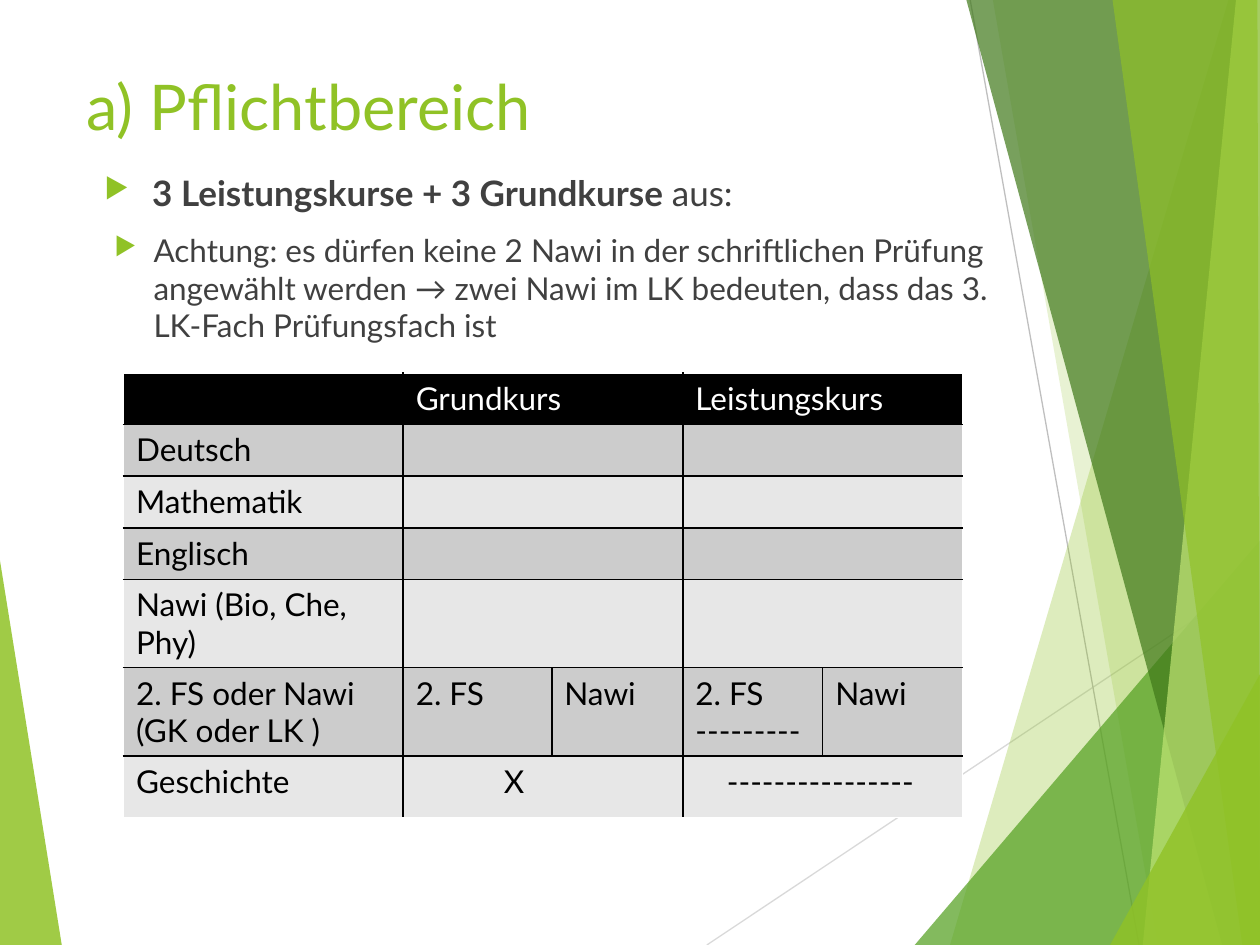
from lxml.etree import SubElement
from pptx import Presentation
from pptx.dml.color import RGBColor
from pptx.enum.shapes import MSO_CONNECTOR
from pptx.enum.text import MSO_ANCHOR
from pptx.oxml.ns import qn
from pptx.util import Inches, Pt

GREEN = RGBColor(0x90, 0xC2, 0x26)
MID_GREEN = RGBColor(0x54, 0xA0, 0x21)
DARK_GREEN = RGBColor(0x3F, 0x78, 0x19)
LIGHT_GREEN = RGBColor(0xC0, 0xE4, 0x74)
TEXT_GRAY = RGBColor(0x40, 0x40, 0x40)
LINE_GRAY = RGBColor(0xBF, 0xBF, 0xBF)
PALE_GRAY = RGBColor(0xD9, 0xD9, 0xD9)
BAND_DARK = RGBColor(0xCC, 0xCC, 0xCC)
BAND_LIGHT = RGBColor(0xE7, 0xE7, 0xE7)
BLACK = RGBColor(0, 0, 0)
WHITE = RGBColor(0xFF, 0xFF, 0xFF)
FONT = "Lato"

LEFT_FACET = ([(0, 4.45), (0.49, 7.5), (0, 7.5)], GREEN, 85)
RAYS = [((5.61, 7.5), (10, 4.57), PALE_GRAY), ((7.7, 0), (9.04, 7.5), LINE_GRAY)]
RIGHT_FACETS = [
    ([(9.75, 0), (7.54, 7.5), (10, 7.5), (10, 0)], GREEN, 30),
    ([(7.88, 0), (9.19, 7.5), (10, 7.5), (10, 0)], GREEN, 20),
    ([(7.26, 7.5), (10, 4.29), (10, 7.5)], MID_GREEN, 72),
    ([(7.67, 0), (9.7, 7.5), (10, 7.5), (10, 0)], DARK_GREEN, 70),
    ([(9.81, 0), (9.07, 7.5), (10, 7.5), (10, 0)], LIGHT_GREEN, 70),
    ([(8.83, 0), (9.86, 7.5), (10, 7.5), (9.98, 0)], GREEN, 65),
    ([(8.81, 7.5), (10, 5.35), (10, 7.5)], GREEN, 80),
]

TITLE = "a) Pflichtbereich"
BULLETS = [
    (0.38, -0.38, 20, [("3 Leistungskurse + 3 Grundkurse ", True), ("aus:", False)]),
    (0.39, -0.31, 18, [("Achtung: es dürfen keine 2 Nawi in der schriftlichen Prüfung "
                        "angewählt werden → zwei Nawi im LK bedeuten, dass das 3. "
                        "LK-Fach Prüfungsfach ist", False)]),
]

COL_WIDTHS = [2.22, 1.18, 1.04, 1.11, 1.11]
ROW_HEIGHTS = [0.41] * 5 + [0.49] * 2
COURSES = [
    ["", "Grundkurs", None, "Leistungskurs", None],
    ["Deutsch", "", None, "", None],
    ["Mathematik", "", None, "", None],
    ["Englisch", "", None, "", None],
    ["Nawi (Bio, Che, Phy)", "", None, "", None],
    ["2. FS oder Nawi (GK oder LK )", "2. FS", "Nawi", "2. FS\n---------", "Nawi"],
    ["Geschichte", "X", None, "----------------", None],
]
CELL_INDENTS = {(6, 1): 0.7, (6, 3): 0.25}


def add_facet(s, points, color, opacity):
    pts = [(Inches(x), Inches(y)) for x, y in points]
    builder = s.shapes.build_freeform(*pts[0], scale=1.0)
    builder.add_line_segments(pts[1:], close=True)
    sp = builder.convert_to_shape()
    sp.shadow.inherit = False
    sp.fill.solid()
    sp.fill.fore_color.rgb = color
    sp.line.fill.background()
    srgb = sp._element.spPr.find(".//" + qn("a:srgbClr"))
    SubElement(srgb, qn("a:alpha"), val=str(opacity * 1000))


def add_ray(s, start, end, color):
    ends = [Inches(v) for v in start + end]
    line = s.shapes.add_connector(MSO_CONNECTOR.STRAIGHT, *ends)
    line.line.color.rgb = color
    line.line.width = Pt(0.75)
    SubElement(line._element.spPr, qn("a:effectLst"))


def add_text_frame(s, *box):
    tf = s.shapes.add_textbox(*[Inches(v) for v in box]).text_frame
    tf.word_wrap = True
    return tf


def add_run(p, text, color, **font):
    r = p.add_run()
    r.text = text
    r.font.color.rgb = color
    for name, value in {"name": FONT, **font}.items():
        setattr(r.font, name, value)


def set_bullet(p, left, indent):
    pPr = p._p.get_or_add_pPr()
    pPr.set("marL", str(Inches(left)))
    pPr.set("indent", str(Inches(indent)))
    color = SubElement(pPr, qn("a:buClr"))
    SubElement(color, qn("a:srgbClr"), val=str(GREEN))
    SubElement(pPr, qn("a:buSzPct"), val="80000")
    SubElement(pPr, qn("a:buChar"), char="▶")


def set_borders(cell, colors):
    tcPr = cell._tc.get_or_add_tcPr()
    for i, (side, color) in enumerate(colors.items()):
        ln = SubElement(tcPr, qn("a:ln" + side), w=str(Pt(1)))
        fill = SubElement(ln, qn("a:solidFill"))
        SubElement(fill, qn("a:srgbClr"), val=str(color))
        tcPr.insert(i, ln)


def add_course_table(s):
    rows, cols = len(COURSES), len(COL_WIDTHS)
    box = [Inches(v) for v in (0.98, 2.96, sum(COL_WIDTHS), sum(ROW_HEIGHTS))]
    table = s.shapes.add_table(rows, cols, *box).table
    for col, width in zip(table.columns, COL_WIDTHS):
        col.width = Inches(width)
    for row, height in zip(table.rows, ROW_HEIGHTS):
        row.height = Inches(height)
    for i, texts in enumerate(COURSES):
        band = BLACK if i == 0 else BAND_DARK if i % 2 else BAND_LIGHT
        for j, text in enumerate(texts):
            cell = table.cell(i, j)
            cell.fill.solid()
            cell.fill.fore_color.rgb = band
            merged = j + 1 < cols and texts[j + 1] is None
            last = j + merged == cols - 1
            set_borders(cell, {
                "L": WHITE if j == 0 else BLACK,
                "R": WHITE if last else BLACK,
                "T": WHITE if i == 0 else BLACK,
                "B": WHITE if i == rows - 1 else BLACK,
            })
            if merged:
                cell.merge(table.cell(i, j + 1))
            if not text:
                continue
            tf = cell.text_frame
            for k, part in enumerate(text.split("\n")):
                p = tf.add_paragraph() if k else tf.paragraphs[0]
                add_run(p, part, BLACK if i else WHITE, size=Pt(18), bold=False)
                if (i, j) in CELL_INDENTS:
                    p._p.get_or_add_pPr().set("marL", str(Inches(CELL_INDENTS[i, j])))


def main():
    prs = Presentation()
    prs.slide_width, prs.slide_height = Inches(10), Inches(7.5)
    s = prs.slides.add_slide(prs.slide_layouts[6])

    add_facet(s, *LEFT_FACET)
    for ray in RAYS:
        add_ray(s, *ray)
    for facet in RIGHT_FACETS:
        add_facet(s, *facet)

    tf = add_text_frame(s, 0.59, 0.44, 7.68, 0.79)
    tf.vertical_anchor = MSO_ANCHOR.MIDDLE
    add_run(tf.paragraphs[0], TITLE, GREEN, size=Pt(36))

    tf = add_text_frame(s, 0.73, 1.31, 7.41, 1.5)
    for i, (left, indent, size, runs) in enumerate(BULLETS):
        p = tf.add_paragraph() if i else tf.paragraphs[0]
        p.space_before = Pt(10)
        set_bullet(p, left, indent)
        for text, bold in runs:
            add_run(p, text, TEXT_GRAY, size=Pt(size), bold=bold)

    add_course_table(s)
    prs.save("out.pptx")


if __name__ == "__main__":
    main()
